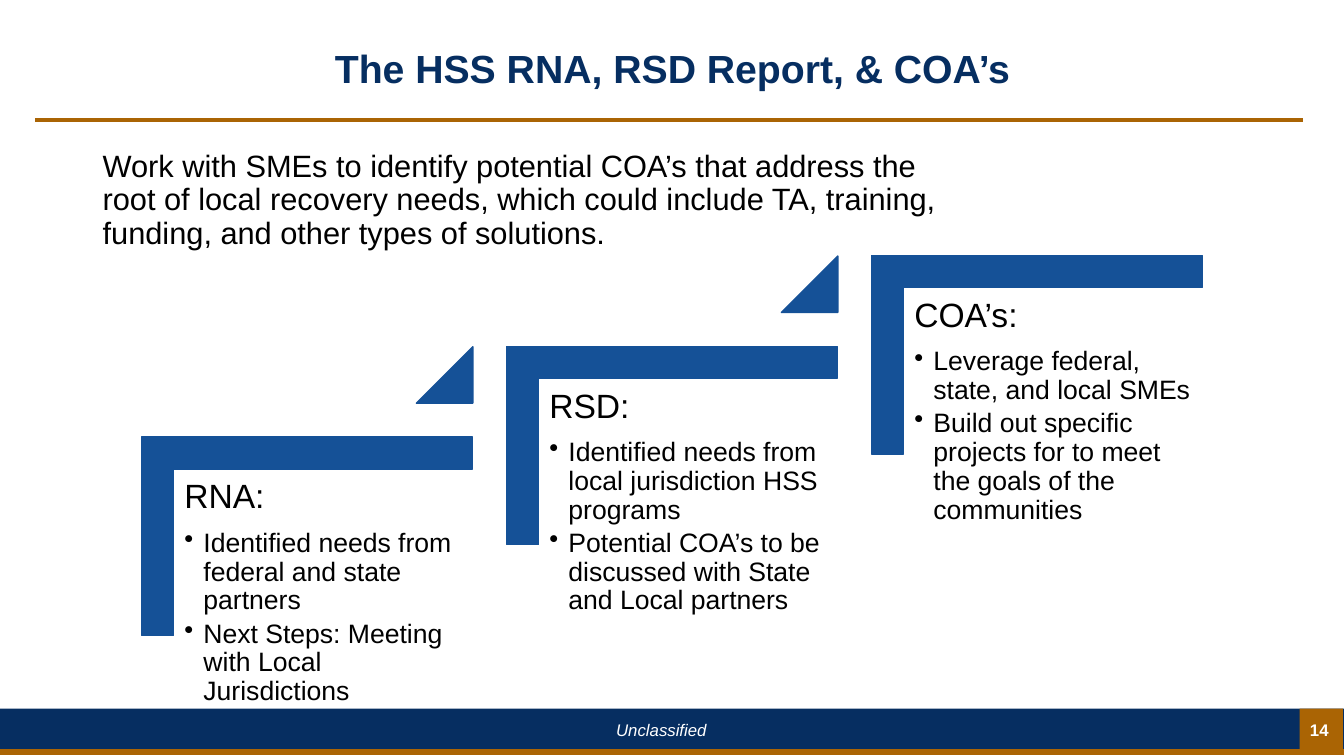
from dataclasses import dataclass
from typing import Any

from lxml import etree
from pptx import Presentation
from pptx.dml.color import RGBColor
from pptx.enum.shapes import MSO_CONNECTOR, MSO_SHAPE
from pptx.enum.text import MSO_ANCHOR, PP_ALIGN
from pptx.oxml.ns import qn
from pptx.util import Inches, Pt

STRAIGHT = MSO_CONNECTOR.STRAIGHT
RECTANGLE = MSO_SHAPE.RECTANGLE
CORNER = MSO_SHAPE.CORNER
TRIANGLE = MSO_SHAPE.ISOSCELES_TRIANGLE
TOP, MIDDLE = MSO_ANCHOR.TOP, MSO_ANCHOR.MIDDLE
LEFT, CENTER = PP_ALIGN.LEFT, PP_ALIGN.CENTER


@dataclass(frozen=True)
class Theme:
    font: str = "Arial"
    navy: str = "062E61"
    blue: str = "155197"
    bronze: str = "AA6404"
    white: str = "FFFFFF"
    black: str = "000000"
    title_size: float = 28
    heading_size: float = 24
    body_size: float = 22
    bullet_size: float = 19
    footer_size: float = 12


@dataclass(frozen=True)
class Box:
    left: float
    top: float
    width: float
    height: float

    def lengths(self) -> list[int]:
        return [Inches(value) for value in (self.left, self.top, self.width, self.height)]


@dataclass(frozen=True)
class TextStyle:
    size: float
    color: str
    bold: bool = False
    italic: bool = False
    alignment: Any = LEFT
    line_spacing: float = 0.9
    space_after: float = 0
    bulleted: bool = False


@dataclass(frozen=True)
class Label:
    box: Box
    text: str
    style: TextStyle
    anchor: Any = TOP


@dataclass(frozen=True)
class Step:
    heading: str
    bullets: tuple[str, ...]


THEME = Theme()
SLIDE_WIDTH, SLIDE_HEIGHT = 13.33, 7.5
STEP_RIGHT, STEP_RISE = 3.62, 0.9
BULLET_INDENT = 0.19

HEADING = TextStyle(THEME.heading_size, THEME.black, space_after=9.5)
BULLET = TextStyle(THEME.bullet_size, THEME.black, space_after=3.2, bulleted=True)

LABELS = (
    Label(Box(5.1, 7.09, 2.92, 0.3), "Unclassified",
          TextStyle(THEME.footer_size, THEME.white, italic=True, alignment=CENTER, line_spacing=1)),
    Label(Box(12.87, 7.12, 0.43, 0.24), "14",
          TextStyle(THEME.footer_size, THEME.white, bold=True, alignment=CENTER, line_spacing=1), MIDDLE),
    Label(Box(0.92, 0.18, 11.5, 1.05), "The HSS RNA, RSD Report, & COA’s",
          TextStyle(THEME.title_size, THEME.navy, bold=True, alignment=CENTER), MIDDLE),
    Label(Box(0.92, 1.45, 8.48, 1.96),
          "Work with SMEs to identify potential COA’s that address the root of local recovery needs, "
          "which could include TA, training, funding, and other types of solutions.",
          TextStyle(THEME.body_size, THEME.black)),
)

STEPS = (
    Step("RNA:", ("Identified needs from federal and state partners",
                  "Next Steps: Meeting with Local Jurisdictions")),
    Step("RSD:", ("Identified needs from local jurisdiction HSS programs",
                  "Potential COA’s to be discussed with State and Local partners")),
    Step("COA’s:", ("Leverage federal, state, and local SMEs",
                    "Build out specific projects for to meet the goals of the communities")),
)


def set_attributes(target: Any, values: dict[str, Any]) -> None:
    for name, value in values.items():
        setattr(target, name, value)


def add_rule(slide: Any, left: float, right: float, top: float, weight: float) -> None:
    connector = slide.shapes.add_connector(STRAIGHT, Inches(left), Inches(top), Inches(right), Inches(top))
    connector.line.color.rgb = RGBColor.from_string(THEME.bronze)
    connector.line.width = Pt(weight)
    properties = connector._element.find(qn("p:spPr"))
    etree.SubElement(properties, qn("a:effectLst"))


def add_block(slide: Any, kind: Any, box: Box, color: str, outlined: bool = False,
              rotation: float = 0, adjustments: tuple[float, ...] = ()) -> None:
    shape = slide.shapes.add_shape(kind, *box.lengths())
    shape.shadow.inherit = False
    shape.rotation = rotation
    for index, value in enumerate(adjustments):
        shape.adjustments[index] = value
    shape.fill.solid()
    shape.fill.fore_color.rgb = RGBColor.from_string(color)
    if outlined:
        shape.line.color.rgb = RGBColor.from_string(color)
        shape.line.width = Pt(1)
    else:
        shape.line.fill.background()


def write_paragraph(paragraph: Any, text: str, style: TextStyle) -> None:
    if style.bulleted:
        properties = paragraph._p.get_or_add_pPr()
        properties.set("marL", str(Inches(BULLET_INDENT)))
        properties.set("indent", str(-Inches(BULLET_INDENT)))
        etree.SubElement(properties, qn("a:buChar"), char="•")
    set_attributes(paragraph, {
        "text": text,
        "alignment": style.alignment,
        "line_spacing": style.line_spacing,
        "space_after": Pt(style.space_after),
    })
    set_attributes(paragraph.font, {
        "name": THEME.font,
        "size": Pt(style.size),
        "bold": style.bold,
        "italic": style.italic,
    })
    paragraph.font.color.rgb = RGBColor.from_string(style.color)


def add_text(slide: Any, box: Box, lines: list[tuple[str, TextStyle]], anchor: Any = TOP,
             margins: dict[str, Any] | None = None) -> None:
    frame = slide.shapes.add_textbox(*box.lengths()).text_frame
    set_attributes(frame, {"word_wrap": True, "vertical_anchor": anchor, **(margins or {})})
    for index, (text, style) in enumerate(lines):
        paragraph = frame.add_paragraph() if index else frame.paragraphs[0]
        write_paragraph(paragraph, text, style)


def add_step(slide: Any, index: int, step: Step) -> None:
    right, rise = index * STEP_RIGHT, index * STEP_RISE
    add_block(slide, CORNER, Box(2.06 + right, 3.68 - rise, 1.97, 3.28), THEME.blue,
              outlined=True, rotation=90, adjustments=(0.161, 0.161))
    lines = [(step.heading, HEADING)] + [(text, BULLET) for text in step.bullets]
    add_text(slide, Box(1.73 + right, 4.66 - rise, 2.96, 2.59), lines,
             margins={"margin_top": Inches(0.1), "margin_bottom": Inches(0.1)})
    if index < len(STEPS) - 1:
        add_block(slide, TRIANGLE, Box(4.13 + right, 3.44 - rise, 0.56, 0.56), THEME.blue,
                  outlined=True, adjustments=(1,))


def main() -> None:
    presentation = Presentation()
    presentation.slide_width = Inches(SLIDE_WIDTH)
    presentation.slide_height = Inches(SLIDE_HEIGHT)
    slide = presentation.slides.add_slide(presentation.slide_layouts[6])
    add_rule(slide, 0.35, 12.92, 1.19, 3)
    add_block(slide, RECTANGLE, Box(0, 7.03, SLIDE_WIDTH, 0.43), THEME.navy)
    add_block(slide, RECTANGLE, Box(12.89, 7.03, 0.43, 0.43), THEME.bronze)
    add_rule(slide, 0, SLIDE_WIDTH, 7.46, 4.5)
    for label in LABELS:
        add_text(slide, label.box, [(label.text, label.style)], label.anchor)
    for index, step in enumerate(STEPS):
        add_step(slide, index, step)
    presentation.save("out.pptx")


if __name__ == "__main__":
    main()
